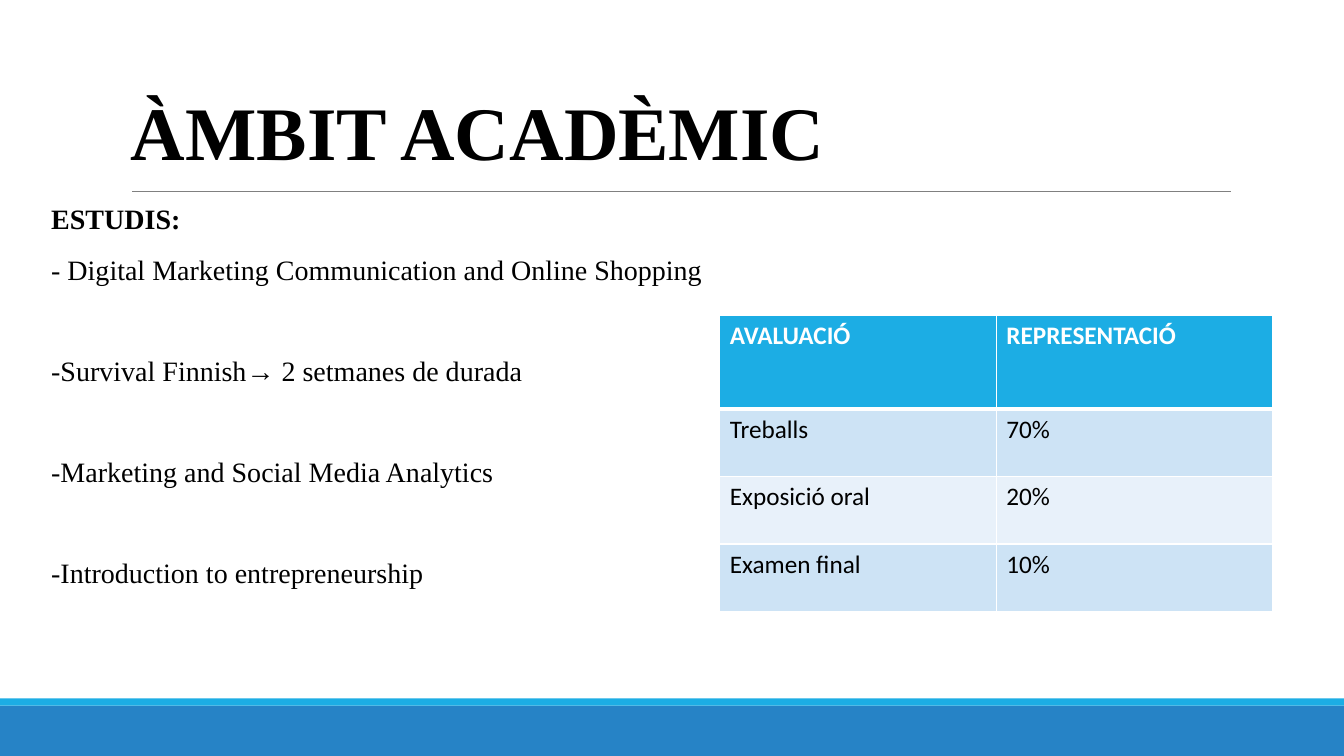
from dataclasses import dataclass

from lxml import etree
from pptx import Presentation
from pptx.dml.color import RGBColor
from pptx.enum.shapes import MSO_CONNECTOR, MSO_SHAPE
from pptx.enum.text import PP_ALIGN
from pptx.oxml.ns import qn
from pptx.slide import Slide
from pptx.table import _Cell
from pptx.text.text import _Paragraph
from pptx.util import Cm, Pt

STRAIGHT = MSO_CONNECTOR.STRAIGHT
RECTANGLE = MSO_SHAPE.RECTANGLE
LEFT = PP_ALIGN.LEFT
JUSTIFY = PP_ALIGN.JUSTIFY

BLACK = RGBColor(0x00, 0x00, 0x00)
WHITE = RGBColor(0xFF, 0xFF, 0xFF)
GRAY = RGBColor(0x80, 0x80, 0x80)
BLUE = RGBColor(0x26, 0x83, 0xC6)
CYAN = RGBColor(0x1C, 0xAD, 0xE4)
BAND_DARK = RGBColor(0xCD, 0xE3, 0xF5)
BAND_LIGHT = RGBColor(0xE8, 0xF1, 0xFA)

SERIF = "Times New Roman"
SANS = "Calibri"
SLIDE_WIDTH = Cm(33.87)
SLIDE_HEIGHT = Cm(19.05)


@dataclass(frozen=True)
class Bar:
    top: float
    height: float
    color: RGBColor


@dataclass(frozen=True)
class TextStyle:
    font: str
    size: float
    color: RGBColor
    bold: bool = False


@dataclass(frozen=True)
class Line:
    text: str
    style: TextStyle
    paragraph_format: dict


TITLE = TextStyle(SERIF, 54, BLACK, True)
HEADING = TextStyle(SERIF, 20, BLACK, True)
BODY = TextStyle(SERIF, 20, BLACK)
TABLE_HEADER = TextStyle(SANS, 18, WHITE, True)
TABLE_BODY = TextStyle(SANS, 18, BLACK)

FIRST_FORMAT = {"alignment": JUSTIFY, "line_spacing": 0.9, "space_after": Pt(2)}
NEXT_FORMAT = FIRST_FORMAT | {"space_before": Pt(13)}
COURSE_FORMAT = FIRST_FORMAT | {"space_before": Pt(48.5)}

BARS = [Bar(17.78, 1.27, BLUE), Bar(17.6, 0.18, CYAN)]
TITLE_LINES = [Line("ÀMBIT ACADÈMIC", TITLE, {"alignment": LEFT})]
STUDY_LINES = [
    Line("ESTUDIS:", HEADING, FIRST_FORMAT),
    Line("- Digital Marketing Communication and Online Shopping", BODY, NEXT_FORMAT),
    Line("-Survival Finnish→ 2 setmanes de durada", BODY, COURSE_FORMAT),
    Line("-Marketing and Social Media Analytics", BODY, COURSE_FORMAT),
    Line("-Introduction to entrepreneurship", BODY, COURSE_FORMAT),
]
ASSESSMENT = [
    ("AVALUACIÓ", "REPRESENTACIÓ"),
    ("Treballs", "70%"),
    ("Exposició oral", "20%"),
    ("Examen final", "10%"),
]


def write_text(paragraph: _Paragraph, text: str, style: TextStyle) -> None:
    run = paragraph.add_run()
    run.text = text
    values = {"name": style.font, "size": Pt(style.size), "bold": style.bold}
    for name, value in values.items():
        setattr(run.font, name, value)
    run.font.color.rgb = style.color


def add_bar(slide: Slide, bar: Bar) -> None:
    shape = slide.shapes.add_shape(RECTANGLE, 0, Cm(bar.top), SLIDE_WIDTH, Cm(bar.height))
    shape.shadow.inherit = False
    shape.fill.solid()
    shape.fill.fore_color.rgb = bar.color
    shape.line.fill.background()


def add_rule(slide: Slide, left: float, right: float, top: float) -> None:
    rule = slide.shapes.add_connector(STRAIGHT, Cm(left), Cm(top), Cm(right), Cm(top))
    rule.line.color.rgb = GRAY
    rule.line.width = Pt(0.5)
    etree.SubElement(rule._element.spPr, qn("a:effectLst"))


def add_text(slide: Slide, left: float, top: float, width: float, height: float,
             lines: list[Line], side_margin: float) -> None:
    shape = slide.shapes.add_textbox(Cm(left), Cm(top), Cm(width), Cm(height))
    frame = shape.text_frame
    values = {"word_wrap": True, "margin_left": Cm(side_margin), "margin_right": Cm(side_margin)}
    for name, value in values.items():
        setattr(frame, name, value)
    for index, line in enumerate(lines):
        paragraph = frame.add_paragraph() if index else frame.paragraphs[0]
        for name, value in line.paragraph_format.items():
            setattr(paragraph, name, value)
        write_text(paragraph, line.text, line.style)


def add_borders(cell: _Cell, widths: dict[str, float]) -> None:
    properties = cell._tc.get_or_add_tcPr()
    for side, width in widths.items():
        border = etree.SubElement(properties, qn(f"a:ln{side}"), w=str(Pt(width)))
        fill = etree.SubElement(border, qn("a:solidFill"))
        etree.SubElement(fill, qn("a:srgbClr"), val=str(WHITE))


def add_assessment_table(slide: Slide) -> None:
    row_heights = [2.36, 1.7, 1.7, 1.7]
    frame = slide.shapes.add_table(len(ASSESSMENT), 2, Cm(18.14), Cm(7.95),
                                   Cm(13.94), Cm(sum(row_heights)))
    table = frame.table
    for column in table.columns:
        column.width = Cm(6.97)
    for row_index, texts in enumerate(ASSESSMENT):
        table.rows[row_index].height = Cm(row_heights[row_index])
        is_header = row_index == 0
        band = BAND_DARK if row_index % 2 else BAND_LIGHT
        widths = {"L": 1, "R": 1, "T": 3 if row_index == 1 else 1, "B": 3 if is_header else 1}
        for column_index, text in enumerate(texts):
            cell = table.cell(row_index, column_index)
            add_borders(cell, widths)
            cell.fill.solid()
            cell.fill.fore_color.rgb = CYAN if is_header else band
            style = TABLE_HEADER if is_header else TABLE_BODY
            write_text(cell.text_frame.paragraphs[0], text, style)


def main() -> None:
    presentation = Presentation()
    presentation.slide_width = SLIDE_WIDTH
    presentation.slide_height = SLIDE_HEIGHT
    slide = presentation.slides.add_slide(presentation.slide_layouts[6])
    for bar in BARS:
        add_bar(slide, bar)
    add_rule(slide, 3.33, 31.01, 4.83)
    add_text(slide, 1.29, 5.04, 27.7, 11.18, STUDY_LINES, 0)
    add_text(slide, 3.05, 2.01, 19.66, 2.57, TITLE_LINES, 0.25)
    add_assessment_table(slide)
    presentation.save("out.pptx")


if __name__ == "__main__":
    main()
